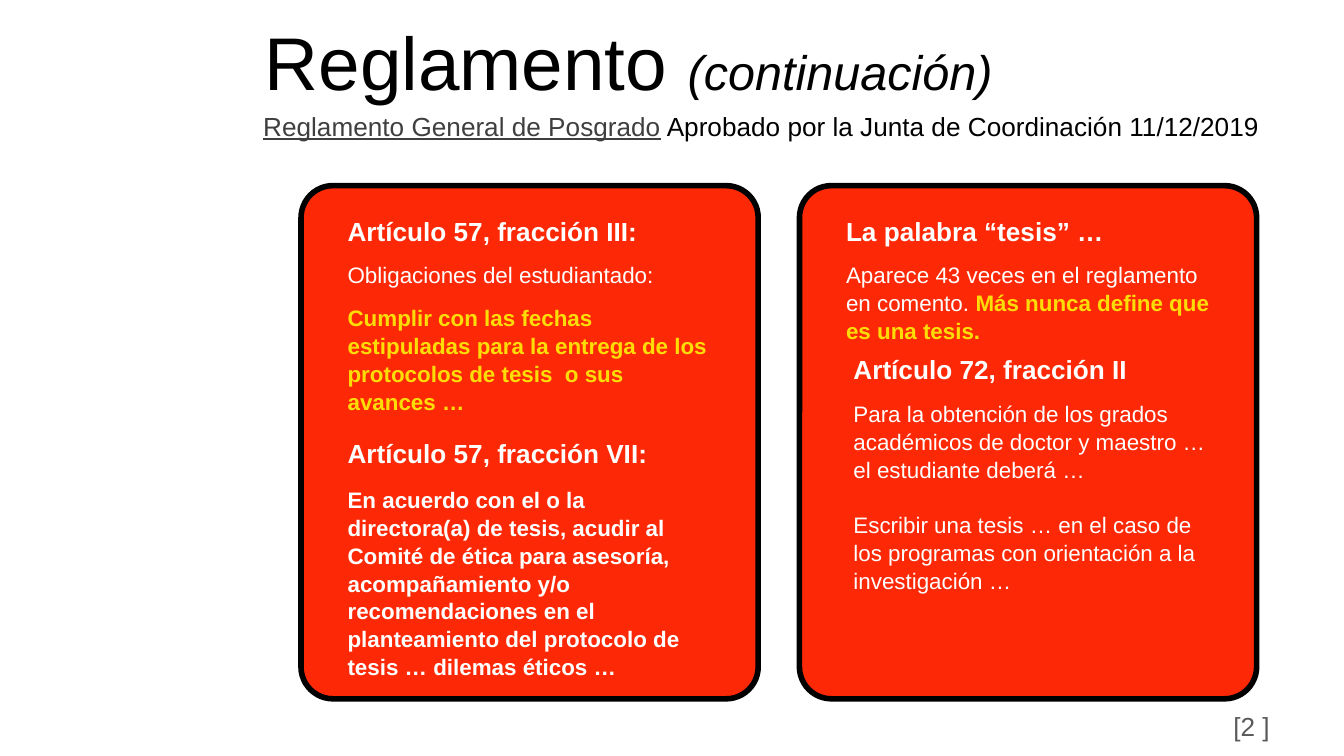
import dataclasses

import pptx
import pptx.dml.color
import pptx.enum.shapes
import pptx.enum.text
import pptx.util

Cm = pptx.util.Cm
Pt = pptx.util.Pt


@dataclasses.dataclass(frozen=True)
class Theme:
    font: str = "Arial"
    ink: str = "000000"
    link: str = "3F3F3F"
    page: str = "595959"
    card: str = "FD2906"
    light: str = "FFFFFF"
    accent: str = "FDDD06"
    title_size: int = 40
    aside_size: int = 26
    heading_size: int = 14
    body_size: int = 12


def rgb(value):
    return pptx.dml.color.RGBColor.from_string(value)


class SlideBuilder:
    def __init__(self, slide, theme):
        self.slide = slide
        self.theme = theme

    def fill_paragraph(self, paragraph, runs, size, color, bold=False):
        """Each run is a pair: its text and a dict of font settings of its own."""
        font = paragraph.font
        font.name, font.size, font.bold = self.theme.font, Pt(size), bold
        font.color.rgb = rgb(color)
        paragraph.alignment = pptx.enum.text.PP_ALIGN.LEFT
        paragraph.space_before = Pt(0)
        for text, settings in runs:
            run = paragraph.add_run()
            run.text = text
            for name, value in settings.items():
                if name == "color":
                    run.font.color.rgb = rgb(value)
                elif name == "size":
                    run.font.size = Pt(value)
                elif name == "bold":
                    run.font.bold = value
                elif name == "italic":
                    run.font.italic = value
                elif name == "underline":
                    run.font.underline = value

    def placeholder(self, shape, box, runs, size):
        shape.left, shape.top, shape.width, shape.height = map(Cm, box)
        frame = shape.text_frame
        frame.auto_size = pptx.enum.text.MSO_AUTO_SIZE.NONE
        frame.vertical_anchor = pptx.enum.text.MSO_ANCHOR.MIDDLE
        self.fill_paragraph(frame.paragraphs[0], runs, size, self.theme.ink)

    def card(self, left, top, width, height):
        shape = self.slide.shapes.add_shape(
            pptx.enum.shapes.MSO_SHAPE.ROUNDED_RECTANGLE,
            Cm(left), Cm(top), Cm(width), Cm(height))
        shape.adjustments[0] = 0.07
        shape.shadow.inherit = False
        shape.fill.solid()
        shape.fill.fore_color.rgb = rgb(self.theme.card)
        shape.line.color.rgb = rgb(self.theme.ink)
        shape.line.width = Pt(3)

    def text_box(self, box, paragraphs, size, color, bold=False):
        shape = self.slide.shapes.add_textbox(*map(Cm, box))
        frame = shape.text_frame
        frame.word_wrap = True
        for index, runs in enumerate(paragraphs):
            paragraph = frame.add_paragraph() if index else frame.paragraphs[0]
            self.fill_paragraph(paragraph, runs, size, color, bold)
            if size == self.theme.body_size:
                paragraph.line_spacing = 1.04
            if index:
                paragraph.space_before = Pt(1.2 * size)
        return frame

    def heading(self, left, top, text):
        self.text_box((left, top, 7.39, 0.86), [[(text, {})]],
                      self.theme.heading_size, self.theme.light, bold=True)

    def body(self, left, top, height, paragraphs, color=None, bold=False):
        self.text_box((left, top, 7.39, height), paragraphs,
                      self.theme.body_size, color or self.theme.light, bold)


def main():
    presentation = pptx.Presentation()
    presentation.slide_width, presentation.slide_height = Cm(25.4), Cm(14.29)
    slide = presentation.slides.add_slide(presentation.slide_layouts[0])
    theme = Theme()
    builder = SlideBuilder(slide, theme)

    builder.placeholder(
        slide.shapes.title, (4.75, 0.28, 20.55, 1.73),
        [("Reglamento ", {}),
         ("(continuación)", {"size": theme.aside_size, "italic": True})],
        theme.title_size)
    builder.placeholder(
        slide.placeholders[1], (4.72, 2.03, 20.57, 0.69),
        [("Reglamento General de Posgrado", {"color": theme.link, "underline": True}),
         (" Aprobado por la Junta de Coordinación 11/12/2019", {})],
        theme.heading_size)

    card_left, card_pitch, text_indent = 5.69, 9.42, 0.63
    card_lefts = [card_left, card_left + card_pitch]
    for left in card_lefts:
        builder.card(left, 3.51, 8.64, 9.7)
    first_text, second_text = [left + text_indent for left in card_lefts]
    article_text = second_text + 0.14

    builder.heading(first_text, 3.94, "Artículo 57, fracción III:")
    builder.body(first_text, 4.8, 0.8, [[("Obligaciones del estudiantado:", {})]])
    builder.body(
        first_text, 5.61, 2.36,
        [[("Cumplir con las fechas estipuladas para la entrega de los "
           "protocolos de tesis  o sus avances …", {})]],
        theme.accent, bold=True)
    builder.heading(first_text, 8.15, "Artículo 57, fracción VII:")
    builder.body(
        first_text, 9.04, 4.04,
        [[("En acuerdo con el o la directora(a) de tesis, acudir al Comité de "
           "ética para asesoría, acompañamiento y/o recomendaciones en el "
           "planteamiento del protocolo de tesis … dilemas éticos …", {})]],
        bold=True)

    builder.heading(second_text, 3.94, "La palabra “tesis” …")
    builder.body(
        second_text, 4.8, 1.5,
        [[("Aparece 43 veces en el reglamento en comento. ", {}),
          ("Más nunca define que es una tesis.",
           {"color": theme.accent, "bold": True})]])
    builder.heading(article_text, 6.55, "Artículo 72, fracción II")
    builder.body(
        article_text, 7.42, 4.04,
        [[("Para la obtención de los grados académicos de doctor y maestro … "
           "el estudiante deberá …", {})],
         [("Escribir una tesis … en el caso de los programas con orientación "
           "a la investigación …", {})]])

    page_frame = builder.text_box((23.06, 13.18, 2.24, 1.11), [[("[2 ]", {})]],
                                  theme.heading_size, theme.page)
    page_frame.margin_top = page_frame.margin_bottom = Cm(0.25)

    presentation.save("out.pptx")


if __name__ == "__main__":
    main()
